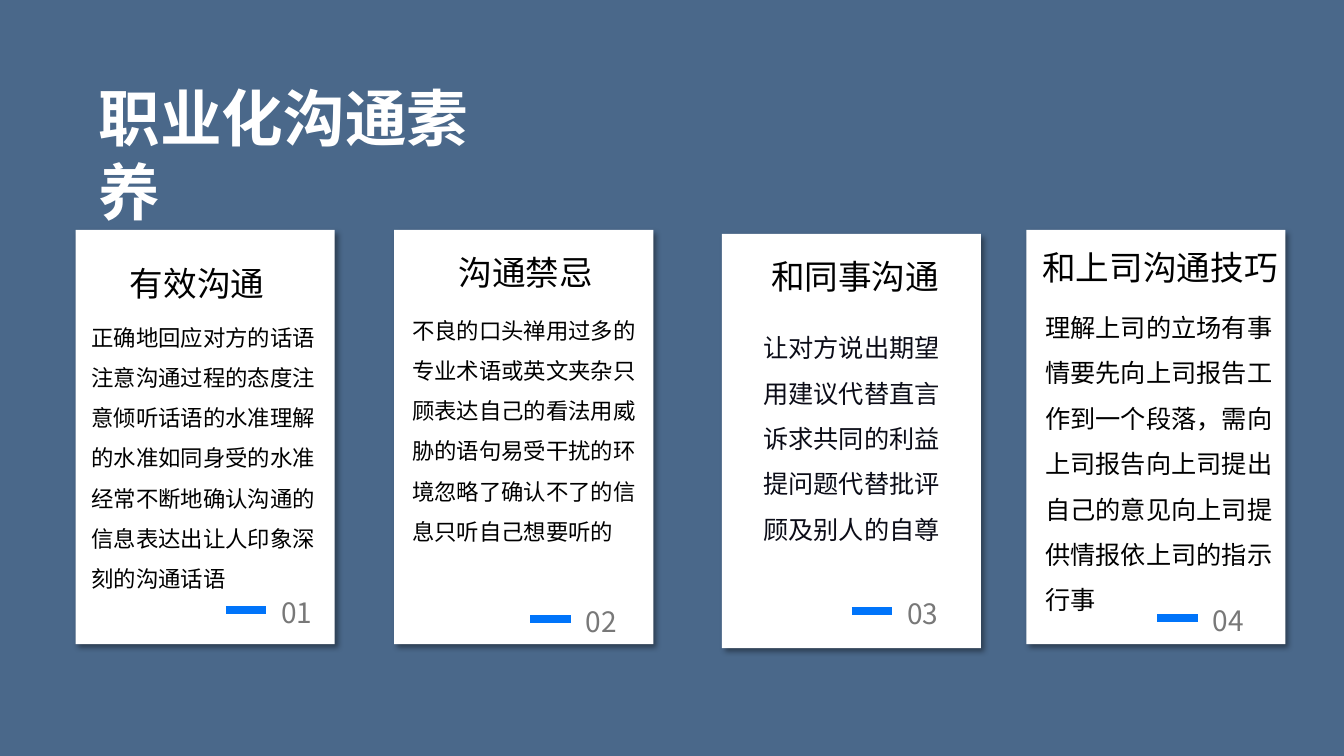
"""Build the slide on professional communication skills with four numbered cards."""
from lxml.etree import SubElement
from pptx import Presentation
from pptx.dml.color import RGBColor
from pptx.enum.shapes import MSO_CONNECTOR, MSO_SHAPE
from pptx.enum.text import MSO_AUTO_SIZE, PP_ALIGN
from pptx.oxml.ns import qn
from pptx.util import Inches, Pt

FONT = "Noto Sans CJK SC"
BACKDROP = RGBColor(0x4A, 0x68, 0x8A)
WHITE = RGBColor(0xFF, 0xFF, 0xFF)
BLACK = RGBColor(0x00, 0x00, 0x00)
INK = RGBColor(0x0B, 0x0C, 0x17)
GREY = RGBColor(0x78, 0x78, 0x78)
BLUE = RGBColor(0x00, 0x74, 0xFA)

TITLE = "职业化沟通素养"
CARD_WIDTH, CARD_HEIGHT = 2.57, 4.11
DASH_LENGTH = 0.4
CARDS = [
    {"corner": (0.75, 2.28), "heading": "有效沟通", "heading_at": (1.19, 2.48, 1.53, 0.58),
     "body": ["正确地回应对方的话语注意沟通过程的态度注意倾听话语的水准理解的水准"
              "如同身受的水准经常不断地确认沟通的信息表达出让人印象深刻的沟通话语"],
     "body_at": (0.81, 3.03, 2.56, 2.9), "size": 16, "color": BLACK,
     "align": PP_ALIGN.LEFT, "dash": (2.24, 6.05)},
    {"corner": (3.91, 2.28), "heading": "沟通禁忌", "heading_at": (4.45, 2.37, 1.53, 0.58),
     "body": ["不良的口头禅用过多的专业术语或英文夹杂只顾表达自己的看法用威胁的语句"
              "易受干扰的环境忽略了确认不了的信息只听自己想要听的"],
     "body_at": (3.99, 2.96, 2.56, 2.5), "size": 16, "color": BLACK,
     "align": PP_ALIGN.LEFT, "dash": (5.26, 6.14)},
    {"corner": (7.16, 2.32), "heading": "和同事沟通", "heading_at": (7.55, 2.41, 1.87, 0.58),
     "body": ["让对方说出期望", "用建议代替直言", "诉求共同的利益", "提问题代替批评", "顾及别人的自尊"],
     "body_at": (7.22, 3.1, 2.45, 2.35), "size": 18, "color": INK,
     "align": PP_ALIGN.CENTER, "dash": (8.45, 6.06)},
    {"corner": (10.18, 2.28), "heading": "和上司沟通技巧", "heading_at": (10.24, 2.32, 2.53, 0.58),
     "body": ["理解上司的立场有事情要先向上司报告工作到一个段落，需向上司报告"
              "向上司提出自己的意见向上司提供情报依上司的指示行事"],
     "body_at": (10.27, 2.9, 2.57, 3.25), "size": 18, "color": BLACK,
     "align": PP_ALIGN.LEFT, "dash": (11.48, 6.13)},
]


def add_text(shapes, place, lines, size, color, spacing=1.0, wrap=False,
             align=PP_ALIGN.LEFT, bold=False):
    box = shapes.add_textbox(*map(Inches, place))
    frame = box.text_frame
    frame.word_wrap = wrap
    frame.auto_size = MSO_AUTO_SIZE.SHAPE_TO_FIT_TEXT
    frame.text = "\n".join(lines)
    for para in frame.paragraphs:
        para.alignment = align
        para.line_spacing = spacing
        font = para.font
        font.size, font.bold, font.name = Pt(size), bold, FONT
        font.color.rgb = color
        defaults = para._p.pPr.find(qn("a:defRPr"))
        SubElement(defaults, qn("a:ea"), typeface=FONT)


def add_panel(page, left, top):
    panel = page.shapes.add_shape(MSO_SHAPE.RECTANGLE, Inches(left), Inches(top),
                                  Inches(CARD_WIDTH), Inches(CARD_HEIGHT))
    panel.fill.solid()
    panel.fill.fore_color.rgb = WHITE
    panel.line.fill.background()
    panel.shadow.inherit = False
    effects = panel._element.spPr.find(qn("a:effectLst"))
    shadow = SubElement(effects, qn("a:outerShdw"), blurRad=str(Pt(4)), dist=str(Pt(3)),
                        dir=str(45 * 60000), algn="tl", rotWithShape="0")
    shade = SubElement(shadow, qn("a:srgbClr"), val=str(BLACK))
    SubElement(shade, qn("a:alpha"), val="40000")


def add_number(page, left, middle, number):
    group = page.shapes.add_group_shape()
    dash = group.shapes.add_connector(MSO_CONNECTOR.STRAIGHT, Inches(left), Inches(middle),
                                      Inches(left + DASH_LENGTH), Inches(middle))
    dash.line.color.rgb = BLUE
    dash.line.width = Pt(6)
    SubElement(dash._element.spPr, qn("a:effectLst"))
    place = (left + DASH_LENGTH + 0.05, middle - 0.26, 0.53, 0.5)
    add_text(group.shapes, place, [f"{number:02d}"], 20, GREY, spacing=1.2)


def main():
    deck = Presentation()
    deck.slide_width, deck.slide_height = Inches(13.33), Inches(7.5)
    page = deck.slides.add_slide(deck.slide_layouts[6])
    page.background.fill.solid()
    page.background.fill.fore_color.rgb = BACKDROP

    add_text(page.shapes, (0.88, 0.74, 4.4, 0.83), [TITLE], 44, WHITE, wrap=True, bold=True)
    for number, card in enumerate(CARDS, start=1):
        add_panel(page, *card["corner"])
        add_text(page.shapes, card["heading_at"], [card["heading"]], 24, BLACK, spacing=1.2)
        add_text(page.shapes, card["body_at"], card["body"], card["size"], card["color"],
                 spacing=1.5, wrap=True, align=card["align"])
        add_number(page, *card["dash"], number)
    deck.save("out.pptx")


if __name__ == "__main__":
    main()
